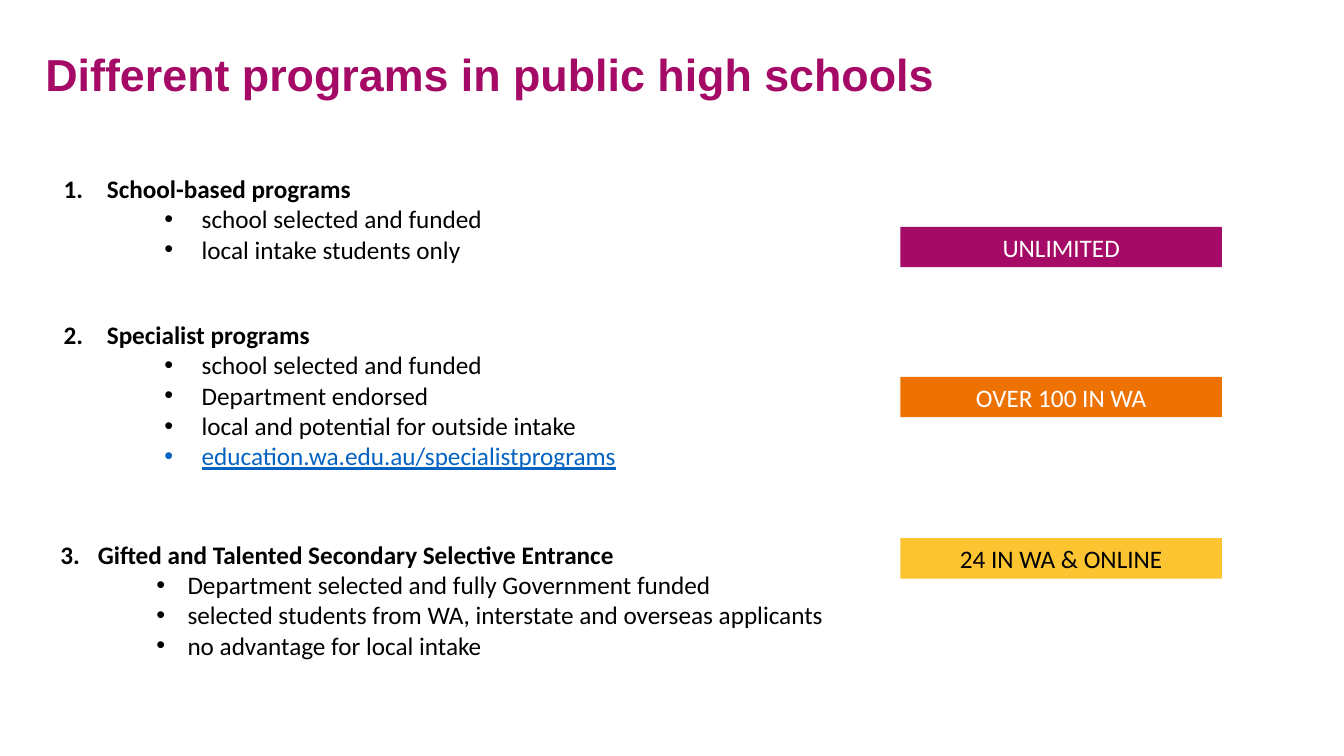
import pptx
import pptx.util
import pptx.dml.color
import pptx.enum.shapes
import pptx.enum.text
import pptx.oxml
import pptx.oxml.ns
from pptx.util import Inches

RGBColor = pptx.dml.color.RGBColor
PLUM = RGBColor(0xA4, 0x0A, 0x66)
ORANGE = RGBColor(0xEE, 0x72, 0x02)
YELLOW = RGBColor(0xFD, 0xC4, 0x32)
LINK_BLUE = RGBColor(0x05, 0x63, 0xC1)
BLACK = RGBColor(0, 0, 0)
WHITE = RGBColor(0xFF, 0xFF, 0xFF)

ANCHOR = pptx.enum.text.MSO_ANCHOR
ALIGN = pptx.enum.text.PP_ALIGN
COMPARISON_LAYOUT = 4

LINK = "education.wa.edu.au/specialistprograms"
# heading, details, (left, top, width, height), heading indent, (detail indent, hang)
PROGRAMS = [
    ("School-based programs",
     ["school selected and funded", "local intake students only"],
     (0.53, 1.67, 5.75, 1.31), 0.43, (1.37, 0.37)),
    ("Specialist programs",
     ["school selected and funded", "Department endorsed",
      "local and potential for outside intake", LINK],
     (0.53, 3.12, 7.95, 1.92), 0.43, (1.37, 0.37)),
    ("Gifted and Talented Secondary Selective Entrance",
     ["Department selected and fully Government funded",
      "selected students from WA, interstate and overseas applicants",
      "no advantage for local intake"],
     (0.5, 5.3, 8.3, 1.31), 0.37, (1.26, 0.31)),
]
# label, top, fill, text colour
AVAILABILITY = [
    ("UNLIMITED", 2.25, PLUM, WHITE),
    ("OVER 100 IN WA", 3.74, ORANGE, WHITE),
    ("24 IN WA & ONLINE", 5.34, YELLOW, BLACK),
]


class ProgramSlide:
    """Holds the text style and the slide being built."""

    body = {"name": "Calibri", "size": pptx.util.Pt(18), "bold": False}
    heading = {"name": "Arial", "size": pptx.util.Pt(32), "bold": True}

    def __init__(self, deck):
        self.slide = deck.slides.add_slide(deck.slide_layouts[COMPARISON_LAYOUT])
        self.bodies = [p for p in self.slide.placeholders
                       if p.placeholder_format.idx in (1, 2, 3, 4)]

    def format(self, target, values):
        for name, value in values.items():
            setattr(target, name, value)

    def style_font(self, font, values, colour):
        self.format(font, values)
        font.color.rgb = colour

    def place(self, shape, box):
        edges = zip(("left", "top", "width", "height"), box)
        self.format(shape, {name: Inches(value) for name, value in edges})

    def set_marker(self, paragraph, marker, indent, hang):
        properties = paragraph._p.get_or_add_pPr()
        properties.set("marL", str(Inches(indent)))
        properties.set("indent", str(-Inches(hang)))
        namespace = pptx.oxml.ns.nsdecls("a")
        for tag in ('buFont typeface="Arial"', marker):
            properties.append(pptx.oxml.parse_xml(f"<a:{tag} {namespace}/>"))

    def add_line(self, paragraph, text, bold=False):
        self.format(paragraph, {"alignment": ALIGN.LEFT, "line_spacing": 1.0,
                                "space_before": pptx.util.Pt(0)})
        self.style_font(paragraph.font, self.body, BLACK)
        run = paragraph.add_run()
        run.text = text
        is_link = text == LINK
        self.style_font(run.font, self.body, LINK_BLUE if is_link else BLACK)
        self.format(run.font, {"bold": bold, "underline": is_link})

    def title(self, text, box):
        title = self.slide.shapes.title
        self.place(title, box)
        frame = title.text_frame
        self.format(frame, {
            "margin_left": 0, "margin_top": 0, "margin_right": 0,
            "margin_bottom": 0, "vertical_anchor": ANCHOR.TOP,
            "auto_size": pptx.enum.text.MSO_AUTO_SIZE.NONE})
        frame.text = text
        paragraph = frame.paragraphs[0]
        self.format(paragraph, {"alignment": ALIGN.LEFT, "line_spacing": 0.9})
        self.style_font(paragraph.runs[0].font, self.heading, PLUM)

    def program(self, number, name, details, box, name_indent, detail_indent):
        body = self.bodies.pop(0)
        self.place(body, box)
        frame = body.text_frame
        self.format(frame, {
            "vertical_anchor": ANCHOR.TOP, "word_wrap": True,
            "auto_size": pptx.enum.text.MSO_AUTO_SIZE.NONE})
        first = frame.paragraphs[0]
        self.set_marker(first, f'buAutoNum type="arabicPeriod" startAt="{number}"',
                        name_indent, name_indent)
        self.add_line(first, name, bold=True)
        for detail in details:
            paragraph = frame.add_paragraph()
            paragraph.level = 1
            self.set_marker(paragraph, 'buChar char="•"', *detail_indent)
            self.add_line(paragraph, detail)

    def availability(self, text, top, fill, colour):
        label = self.slide.shapes.add_shape(
            pptx.enum.shapes.MSO_SHAPE.RECTANGLE,
            Inches(8.93), Inches(top), Inches(3.19), Inches(0.4))
        label.shadow.inherit = False
        label.fill.solid()
        label.fill.fore_color.rgb = fill
        label.line.fill.background()
        frame = label.text_frame
        frame.vertical_anchor = ANCHOR.MIDDLE
        frame.text = text
        frame.paragraphs[0].alignment = ALIGN.CENTER
        self.style_font(frame.paragraphs[0].runs[0].font, self.body, colour)

    def remove_unused(self):
        for body in self.bodies:
            body.element.getparent().remove(body.element)


def main():
    deck = pptx.Presentation()
    deck.slide_width, deck.slide_height = Inches(13.33), Inches(7.5)
    page = ProgramSlide(deck)

    # Title
    page.title("Different programs in public high schools",
               (0.45, 0.52, 11.97, 0.96))

    # Numbered programs with their details
    for number, program in enumerate(PROGRAMS, start=1):
        page.program(number, *program)
    page.remove_unused()

    # Availability labels
    for label in AVAILABILITY:
        page.availability(*label)

    deck.save("out.pptx")


if __name__ == "__main__":
    main()
